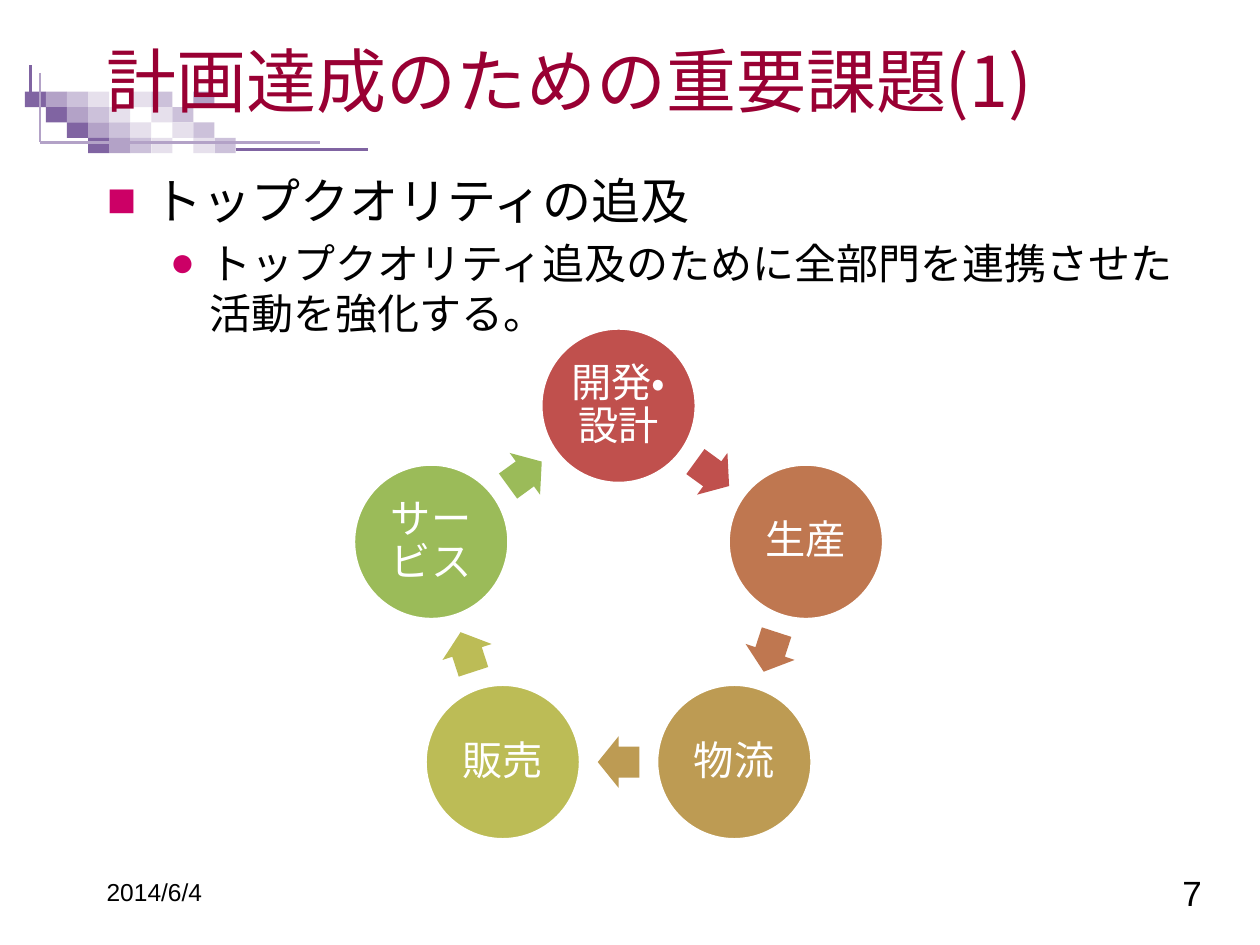
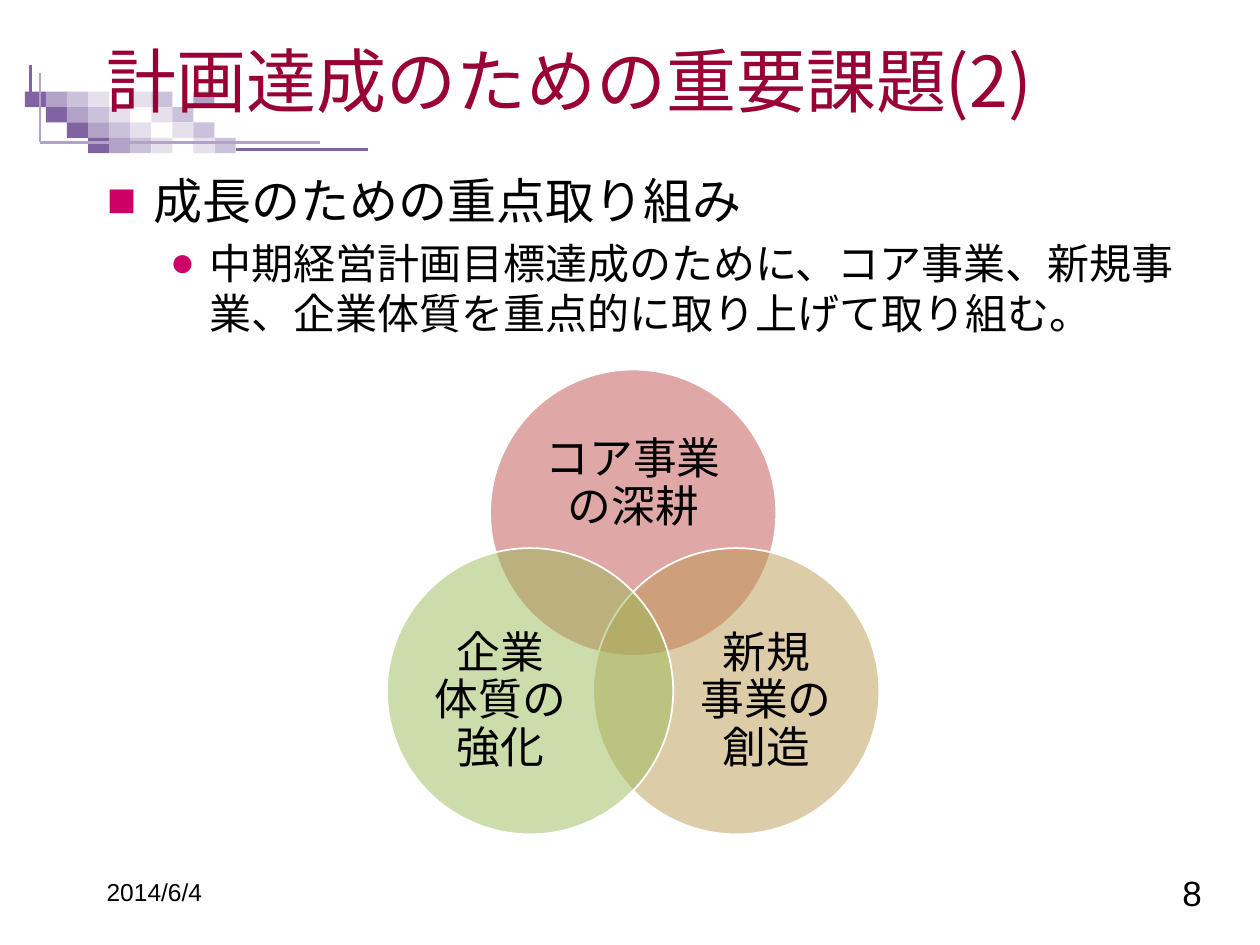
import math
from dataclasses import dataclass

import lxml.etree
import pptx
import pptx.dml.color
import pptx.enum.lang
import pptx.enum.shapes
import pptx.enum.text
import pptx.oxml.ns
import pptx.util

Cm = pptx.util.Cm
Pt = pptx.util.Pt
qn = pptx.oxml.ns.qn
SHAPES = pptx.enum.shapes.MSO_SHAPE
ALIGN = pptx.enum.text.PP_ALIGN
ANCHOR = pptx.enum.text.MSO_ANCHOR


@dataclass(frozen=True)
class Theme:
    font: str = "Arial"
    title_font: str = "Noto Sans CJK JP"
    title: str = "990033"
    text: str = "000000"
    white: str = "FFFFFF"
    bullet: str = "CC0066"
    purples: tuple = ("8064A2", "B3A2C7", "CCC1DA", "E6E0EC")
    cycle: tuple = ("C0504D", "BF7750", "BD9B53", "BCBC56", "9BBB59")
    venn: tuple = ("C0504D", "BD9B53", "9BBB59")
    title_size: int = 40
    body_sizes: tuple = (28, 24)
    cycle_size: int = 23
    venn_size: int = 25
    date_size: int = 14
    number_size: int = 20


@dataclass(frozen=True)
class Box:
    """A rectangle in centimetres."""
    left: float
    top: float
    width: float
    height: float

    @property
    def center(self):
        return self.left + self.width / 2, self.top + self.height / 2

    @property
    def lengths(self):
        return Cm(self.left), Cm(self.top), Cm(self.width), Cm(self.height)


THEME = Theme()
TITLE_BOX = Box(1.9, 0.43, 22.66, 2.34)
BODY_BOX = Box(1.9, 3.3, 22.66, 13.64)
DATE_BOX = Box(1.9, 17.35, 5.28, 1.27)
NUMBER_BOX = Box(19.2, 17.35, 5.28, 1.27)
MOSAIC_BOX = Box(0.5, 1.85, 4.25, 1.24)
CYCLE_BOX = Box(6.95, 6.63, 11.04, 11.04)
VENN_BOX = Box(7.48, 7.45, 10.57, 10.57)


# Basic parts
def rgb(color):
    return pptx.dml.color.RGBColor.from_string(color)


def centered_box(center, width, height):
    return Box(center[0] - width / 2, center[1] - height / 2, width, height)


def around(center, radius, degrees):
    """Point on a circle, measured clockwise from the top."""
    angle = math.radians(degrees)
    return center[0] + radius * math.sin(angle), center[1] - radius * math.cos(angle)


def place(shape, box):
    shape.left, shape.top, shape.width, shape.height = box.lengths


def add_run(paragraph, text, size, color, font=THEME.font):
    run = paragraph.add_run()
    run.text = text
    run.font.size = Pt(size)
    run.font.name = font
    run.font.color.rgb = rgb(color)
    run.font.language_id = pptx.enum.lang.MSO_LANGUAGE_ID.JAPANESE


def write(shape, lines, size, color, align=ALIGN.CENTER, inset=None, spacing=None):
    frame = shape.text_frame
    frame.word_wrap = True
    frame.vertical_anchor = ANCHOR.MIDDLE
    if inset is not None:
        frame.margin_left = frame.margin_right = Cm(inset)
        frame.margin_top = frame.margin_bottom = Cm(inset)
    paragraph = frame.paragraphs[0]
    paragraph.alignment = align
    paragraph.line_spacing = spacing
    for index, line in enumerate(lines):
        if index:
            paragraph.add_line_break()
        add_run(paragraph, line, size, color)


def add_filled(shapes, kind, box, color, outlined=False, opacity=None):
    shape = shapes.add_shape(kind, *box.lengths)
    shape.shadow.inherit = False
    shape.fill.solid()
    shape.fill.fore_color.rgb = rgb(color)
    if outlined:
        shape.line.color.rgb = rgb(THEME.white)
        shape.line.width = Pt(1)
    else:
        shape.line.fill.background()
    if opacity is not None:
        fill_color = shape.element.spPr.find(qn("a:solidFill") + "/" + qn("a:srgbClr"))
        lxml.etree.SubElement(fill_color, qn("a:alpha"), val=str(opacity * 1000))
    return shape


def add_line(shapes, start, end, color):
    line = shapes.add_connector(
        pptx.enum.shapes.MSO_CONNECTOR.STRAIGHT, *map(Cm, start + end))
    line.line.color.rgb = rgb(color)
    line.line.width = Pt(1.5)
    lxml.etree.SubElement(line.element.spPr, qn("a:effectLst"))


# Mosaic of squares and rules, shared through the layout
def add_mosaic(slide, box):
    shapes = slide.shapes.add_group_shape().shapes
    column_width, row_height = box.width / 10, box.height / 4
    steps = ((0, 0), (1, 1), (2, 2), (3, 3), (5, 3), (6, 2))
    cells = [(row, row + step, tone) for row in range(4) for step, tone in steps]
    for row, column, tone in cells + [(0, 8, 1)]:
        cell = Box(box.left + column * column_width, box.top + row * row_height,
                   column_width, row_height)
        add_filled(shapes, SHAPES.RECTANGLE, cell, THEME.purples[tone])
    dark, medium = THEME.purples[:2]
    for start, end, color in (
        ((0.31, -0.38), (0.31, 1.02), medium),
        ((0.31, 1.02), (5.95, 1.02), medium),
        ((4.25, 1.17), (6.92, 1.17), dark),
        ((0.11, 0), (0.11, -0.53), dark),
    ):
        add_line(shapes, (box.left + start[0], box.top + start[1]),
                 (box.left + end[0], box.top + end[1]), color)
    return slide.shapes[-1]


# Title, bulleted list and footer
def write_title(slide, text, box):
    title = slide.shapes.title
    place(title, box)
    frame = title.text_frame
    frame.auto_size = pptx.enum.text.MSO_AUTO_SIZE.NONE
    frame.vertical_anchor = ANCHOR.MIDDLE
    frame.paragraphs[0].alignment = ALIGN.LEFT
    add_run(frame.paragraphs[0], text, THEME.title_size, THEME.title, THEME.title_font)


def set_bullet(paragraph, character, left, hanging):
    properties = paragraph._p.get_or_add_pPr()
    properties.set("marL", str(Cm(left)))
    properties.set("indent", str(-Cm(hanging)))
    color = lxml.etree.SubElement(properties, qn("a:buClr"))
    lxml.etree.SubElement(color, qn("a:srgbClr"), val=THEME.bullet)
    lxml.etree.SubElement(properties, qn("a:buFont"), typeface=THEME.font)
    lxml.etree.SubElement(properties, qn("a:buChar"), char=character)


def write_body(slide, heading, detail, box):
    body = slide.placeholders[1]
    place(body, box)
    frame = body.text_frame
    frame.auto_size = pptx.enum.text.MSO_AUTO_SIZE.NONE
    frame.vertical_anchor = ANCHOR.TOP
    levels = ((heading, "■", 0.95, 0.95), (detail, "●", 2.06, 0.79))
    for level, (text, character, left, hanging) in enumerate(levels):
        paragraph = frame.add_paragraph() if level else frame.paragraphs[0]
        paragraph.level = level
        set_bullet(paragraph, character, left, hanging)
        if not level:
            paragraph.space_before = Pt(0)
        add_run(paragraph, text, THEME.body_sizes[level], THEME.text)


def add_footer(slide, number):
    for text, box, size, align in (
        ("2014/6/4", DATE_BOX, THEME.date_size, ALIGN.LEFT),
        (str(number), NUMBER_BOX, THEME.number_size, ALIGN.RIGHT),
    ):
        write(slide.shapes.add_textbox(*box.lengths), [text], size, THEME.text, align)


# Ring of circles joined by arrows
def add_cycle(slide, labels, box):
    diameter = 3.1
    radius = (box.width - diameter) / 2
    step = 360 / len(labels)
    arrow_radius = radius * math.cos(math.radians(step / 2))
    for index, (label, color) in enumerate(zip(labels, THEME.cycle)):
        center = around(box.center, radius, index * step)
        circle = add_filled(slide.shapes, SHAPES.OVAL,
                            centered_box(center, diameter, diameter), color, outlined=True)
        write(circle, [label], THEME.cycle_size, THEME.white, inset=0.08, spacing=0.9)
        direction = (index + 0.5) * step
        center = around(box.center, arrow_radius, direction)
        arrow = add_filled(slide.shapes, SHAPES.RIGHT_ARROW,
                           centered_box(center, 0.84, 1.04), color)
        arrow.adjustments[0], arrow.adjustments[1] = 0.6, 0.5
        arrow.rotation = direction


# Three overlapping circles
def add_venn(slide, labels, box):
    diameter = 5.77
    radius = (box.width - diameter) / 2
    middle_x, middle_y = box.center
    label_places = ((0, -2.97, 4.22, 2.59), (2.68, 1.41, 3.45, 3.18),
                    (-2.68, 1.41, 3.45, 3.18))
    for index, (lines, color) in enumerate(zip(labels, THEME.venn)):
        center = around(box.center, radius, index * 120)
        add_filled(slide.shapes, SHAPES.OVAL, centered_box(center, diameter, diameter),
                   color, outlined=True, opacity=50)
        x, y, width, height = label_places[index]
        label_box = centered_box((middle_x + x, middle_y + y), width, height)
        write(slide.shapes.add_textbox(*label_box.lengths), lines,
              THEME.venn_size, THEME.text, inset=0, spacing=0.9)


def add_issue_slide(presentation, number, title, heading, detail):
    slide = presentation.slides.add_slide(presentation.slide_layouts[1])
    write_title(slide, title, TITLE_BOX)
    write_body(slide, heading, detail, BODY_BOX)
    return slide


def main():
    presentation = pptx.Presentation()
    presentation.slide_width, presentation.slide_height = Cm(25.4), Cm(19.05)
    layout = presentation.slide_layouts[1]
    for placeholder in list(layout.placeholders)[2:]:
        layout.shapes.element.remove(placeholder.element)

    quality = add_issue_slide(
        presentation, 7, "計画達成のための重要課題(1)", "トップクオリティの追及",
        "トップクオリティ追及のために全部門を連携させた活動を強化する。")
    layout.shapes.element.append(add_mosaic(quality, MOSAIC_BOX).element)
    add_footer(quality, 7)
    add_cycle(quality, ("開発・設計", "生産", "物流", "販売", "サービス"), CYCLE_BOX)

    growth = add_issue_slide(
        presentation, 8, "計画達成のための重要課題(2)", "成長のための重点取り組み",
        "中期経営計画目標達成のために、コア事業、新規事業、企業体質を重点的に取り上げて取り組む。")
    add_footer(growth, 8)
    add_venn(growth, (("コア事業の深耕",), ("新規", "事業の", "創造"),
                      ("企業", "体質の強化")), VENN_BOX)
    presentation.save("out.pptx")


if __name__ == "__main__":
    main()
